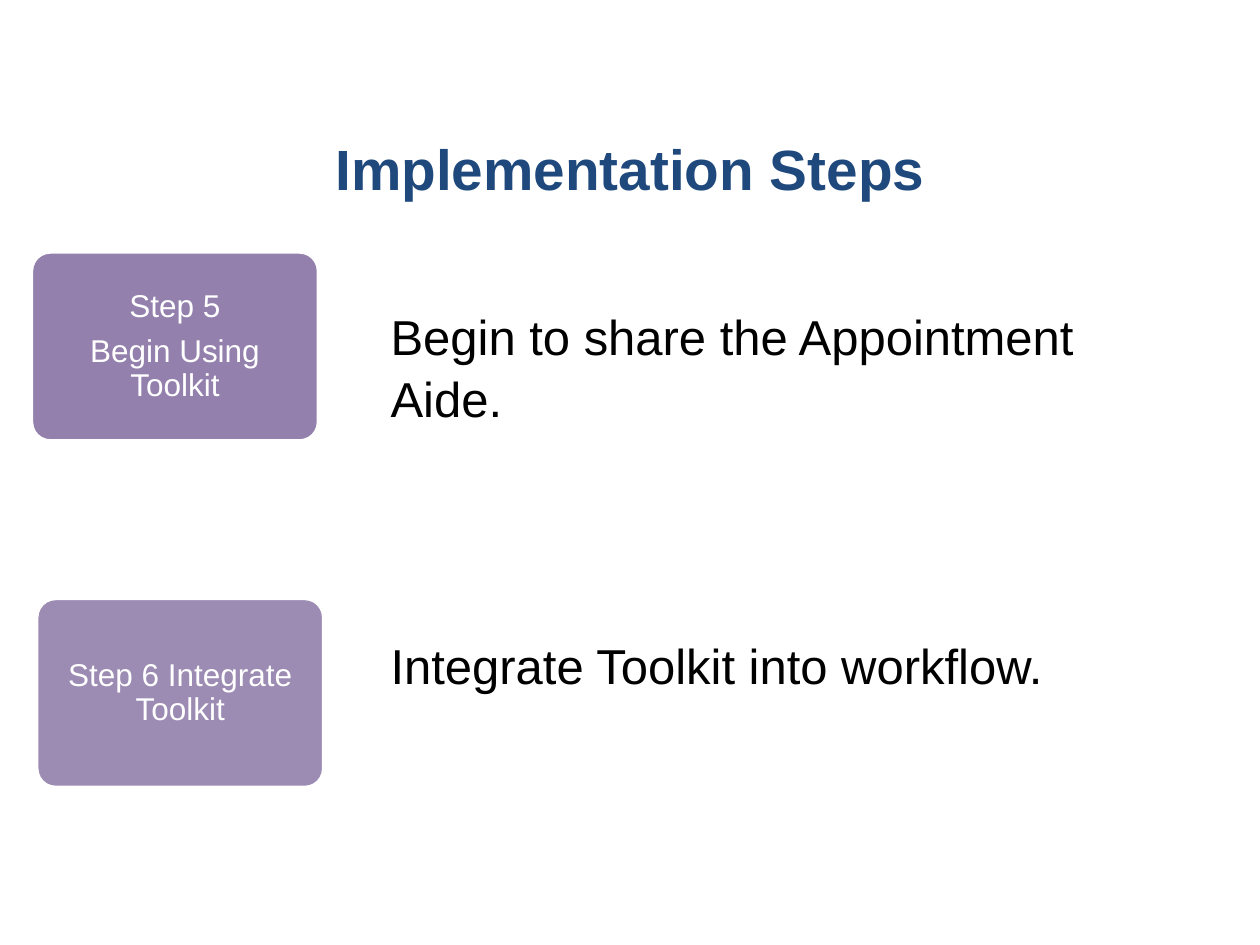
from pptx import Presentation
from pptx import util as u
from pptx.dml.color import RGBColor
from pptx.enum import shapes, text
from pptx.oxml.ns import qn

TITLE = "Implementation Steps"
DETAILS = ["Begin to share the Appointment Aide.", "Integrate Toolkit into workflow."]
STEPS = [
    {"lines": ["Step 5", "Begin Using Toolkit"], "at": (18, 144), "fill": "9380AD"},
    {"lines": ["Step 6 Integrate Toolkit"], "at": (21, 342), "fill": "9C8BB3"},
]
CARD_SIZE = (164, 108)
DETAIL_GAP = 117.5

TITLE_FONT = {"name": "Arial", "size": u.Pt(32.4), "bold": True}
DETAIL_FONT = {"name": "Arial", "size": u.Pt(28)}
CARD_FONT = {"name": "Arial", "size": u.Pt(18)}
CENTERED = {"alignment": text.PP_ALIGN.CENTER}
CARD_PARA = {**CENTERED, "line_spacing": 0.9, "space_after": u.Pt(6.3)}
MARGINS = ("margin_left", "margin_top", "margin_right", "margin_bottom")


def paint(target, color):
    target.rgb = RGBColor.from_string(color)


def apply(target, values):
    for name, value in values.items():
        setattr(target, name, value)


def place(shape, *bounds):
    apply(shape, dict(zip(("left", "top", "width", "height"), map(u.Pt, bounds))))


def write(box, lines, para_format, font_format, color, anchor, margins):
    frame = box.text_frame
    frame.text = "\n".join(lines)
    apply(frame, {"word_wrap": True, "auto_size": text.MSO_AUTO_SIZE.NONE,
                  "vertical_anchor": anchor})
    apply(frame, dict(zip(MARGINS, map(u.Pt, margins))))
    for para in frame.paragraphs:
        apply(para, para_format)
        for span in para.runs:
            apply(span.font, font_format)
            paint(span.font.color, color)
    return frame.paragraphs


def add_card(slide, step):
    bounds = map(u.Pt, step["at"] + CARD_SIZE)
    card = slide.shapes.add_shape(shapes.MSO_SHAPE.ROUNDED_RECTANGLE, *bounds)
    card.adjustments[0] = 0.1
    card.shadow.inherit = False
    card.fill.solid()
    paint(card.fill.fore_color, step["fill"])
    card.line.width = u.Pt(2)
    paint(card.line.color, "FFFFFF")
    write(card, step["lines"], CARD_PARA, CARD_FONT, "FFFFFF",
          text.MSO_ANCHOR.MIDDLE, (8, 8, 8, 8))


def main():
    deck = Presentation()
    deck.slide_width, deck.slide_height = u.Pt(720), u.Pt(540)
    slide = deck.slides.add_slide(deck.slide_layouts[1])
    title, body = slide.placeholders

    place(title, 36, 71.3, 648, 49)
    write(title, [TITLE], CENTERED, TITLE_FONT, "1F497D",
          text.MSO_ANCHOR.MIDDLE, (7.2, 3.6, 7.2, 3.6))

    place(body, 216, 129.6, 408.2, 356.4)
    paras = write(body, DETAILS, {"line_spacing": 1.05}, DETAIL_FONT, "000000",
                  text.MSO_ANCHOR.TOP, (7.2, 44, 7.2, 3.6))
    for index, para in enumerate(paras):
        para.space_before = u.Pt(DETAIL_GAP if index else 0)
        props = para._p.get_or_add_pPr()
        props.set("marL", "0")
        props.set("indent", "0")
        props.append(props.makeelement(qn("a:buNone"), {}))

    for step in STEPS:
        add_card(slide, step)
    deck.save("out.pptx")


if __name__ == "__main__":
    main()
